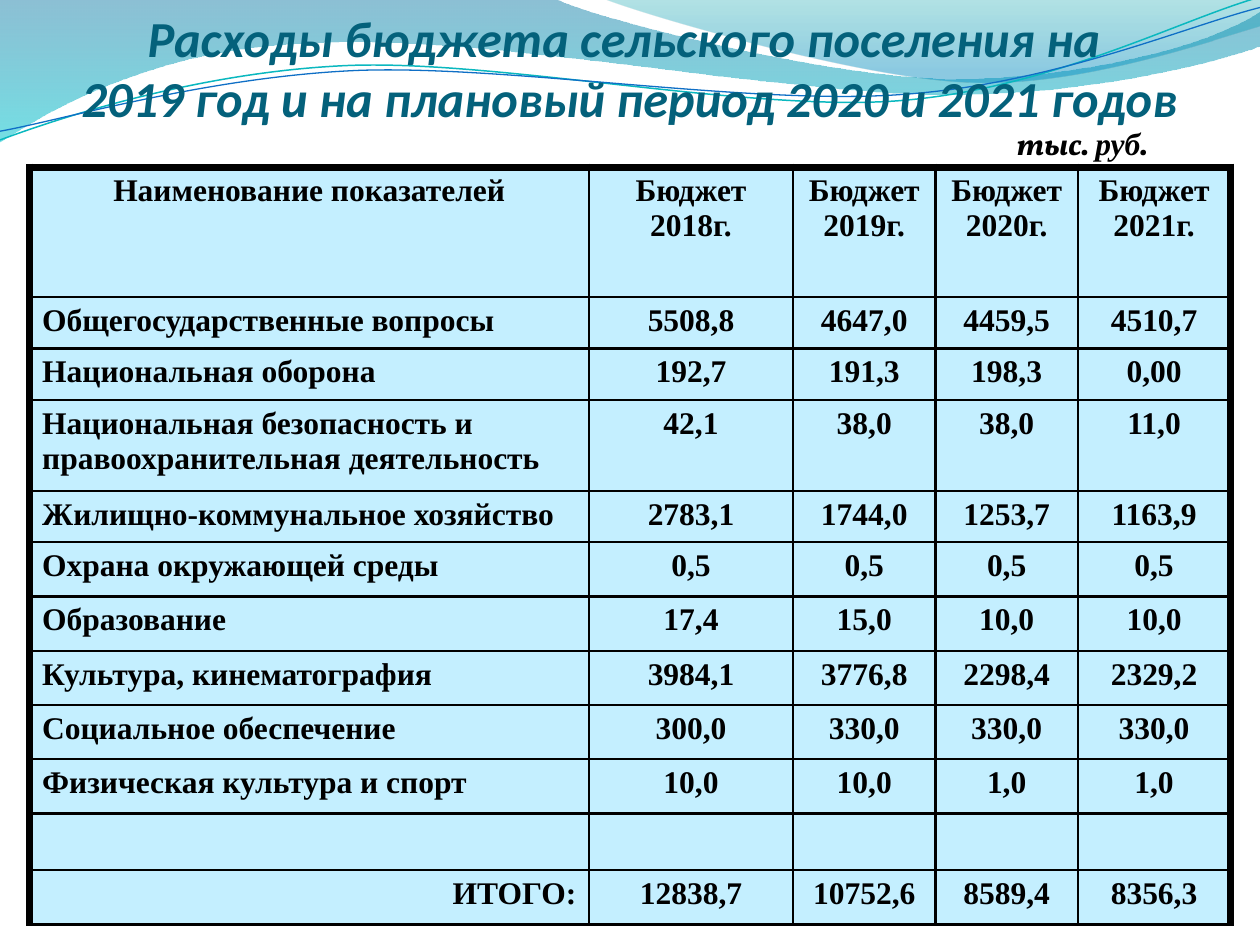
import math

import pptx
import pptx.dml.color
import pptx.enum.text
import pptx.oxml
import pptx.oxml.ns
import pptx.util
from lxml import etree

Pt = pptx.util.Pt
qn = pptx.oxml.ns.qn
ALIGN = pptx.enum.text.PP_ALIGN
ANCHOR = pptx.enum.text.MSO_ANCHOR

BLACK = "000000"
CELL_FILL = "C4EFFF"
THICK, THIN = 4.5, 1.5
LINE_TILT = -2.7

# Waves, in points: a start, then lines (2 numbers) and Bezier curves (6 numbers)
BROAD_WAVE = [
    (0, 0), (317, -0.7), (343, 12, 478, 45, 546, 45), (614, 45, 690, 27, 720, 6.5),
    (720.7, 26), (708, 32, 626, 55, 537, 54), (448, 54, 275, 20, 185, 24.5),
    (93, 26, 33, 60, -0.7, 81.4), (0, 0),
]
RIGHT_WAVE = [
    (345, -0.7), (366, 8, 491, 45, 554, 47), (616, 50, 692, 23, 720, 15), (720, 0),
]
TEAL_LINE = [
    (0, 80), (35, 67, 114, 41, 199, 37.4), (284, 34, 427, 64, 513, 57.6),
    (600, 51, 675, 11, 719, -1.4),
]
BLUE_LINE = [
    (0, 75), (34, 69, 118, 44, 204, 40.3), (290, 37, 430, 60.5, 516, 54),
    (602, 48, 677.5, 15, 720, 4.3),
]

COLUMN_WIDTHS = [319.7, 116.6, 81.4, 81.4, 87.1]
ROW_HEIGHTS = [74.2, 29.5, 29.5, 51.8, 29.5] + [31] * 5 + [32.4, 31]
BUDGET_ROWS = [
    ("Наименование показателей", "Бюджет 2018г.", "Бюджет 2019г.", "Бюджет 2020г.", "Бюджет 2021г."),
    ("Общегосударственные вопросы", "5508,8", "4647,0", "4459,5", "4510,7"),
    ("Национальная оборона", "192,7", "191,3", "198,3", "0,00"),
    ("Национальная безопасность и правоохранительная деятельность", "42,1", "38,0", "38,0", "11,0"),
    ("Жилищно-коммунальное хозяйство", "2783,1", "1744,0", "1253,7", "1163,9"),
    ("Охрана окружающей среды", "0,5", "0,5", "0,5", "0,5"),
    ("Образование", "17,4", "15,0", "10,0", "10,0"),
    ("Культура, кинематография", "3984,1", "3776,8", "2298,4", "2329,2"),
    ("Социальное обеспечение", "300,0", "330,0", "330,0", "330,0"),
    ("Физическая культура и спорт", "10,0", "10,0", "1,0", "1,0"),
    ("", "", "", "", ""),
    ("ИТОГО:", "12838,7", "10752,6", "8589,4", "8356,3"),
]


def color(hex_string):
    return pptx.dml.color.RGBColor.from_string(hex_string)


def set_font(font, name, size, hex_string, italic=False):
    font.name, font.size = name, Pt(size)
    font.bold, font.italic = True, italic
    font.color.rgb = color(hex_string)


def turn(segment, center, degrees):
    """Turn every point of a segment around the center."""
    cosine, sine = math.cos(math.radians(degrees)), math.sin(math.radians(degrees))
    turned = []
    for x, y in zip(segment[::2], segment[1::2]):
        dx, dy = x - center[0], y - center[1]
        turned += [center[0] + dx * cosine - dy * sine, center[1] + dx * sine + dy * cosine]
    return turned


def add_wave(slide, segments, close):
    points = [(Pt(x), Pt(y)) for segment in segments
              for x, y in zip(segment[::2], segment[1::2])]
    builder = slide.shapes.build_freeform(*points[0])
    builder.add_line_segments(points[1:], close=close)
    shape = builder.convert_to_shape()
    shape.shadow.inherit = False
    # Join each group of three points into one Bezier curve
    lines = iter(list(shape._element.iter(qn("a:lnTo"))))
    for segment in segments[1:]:
        group = [next(lines) for _ in range(len(segment) // 2)]
        if len(group) == 3:
            curve = etree.Element(qn("a:cubicBezTo"))
            group[0].addprevious(curve)
            for line in group:
                curve.append(line[0])
                line.getparent().remove(line)
    return shape


def add_filled_wave(slide, segments, stops):
    shape = add_wave(slide, segments, close=True)
    shape.line.fill.background()
    shape.fill.gradient()
    shape.fill.gradient_angle = 270
    for stop, (position, hex_string, _) in zip(shape.fill.gradient_stops, stops):
        stop.position = position
        stop.color.rgb = color(hex_string)
    for element, (_, _, opacity) in zip(shape._element.iter(qn("a:gs")), stops):
        etree.SubElement(element[0], qn("a:alpha"), val=str(opacity * 1000))


def add_wave_line(slide, segments, center, hex_string, width):
    level = [turn(segment, center, -LINE_TILT) for segment in segments]
    shape = add_wave(slide, level, close=False)
    shape.rotation = LINE_TILT
    shape.fill.background()
    shape.line.color.rgb = color(hex_string)
    shape.line.width = Pt(width)


def add_text_box(slide, left, top, width, height):
    frame = slide.shapes.add_textbox(Pt(left), Pt(top), Pt(width), Pt(height)).text_frame
    frame.word_wrap = True
    return frame


def add_title(slide):
    frame = add_text_box(slide, 0, 0, 720, 73)
    frame.vertical_anchor = ANCHOR.BOTTOM
    frame.margin_left = frame.margin_right = frame.margin_bottom = 0
    paragraph = frame.paragraphs[0]
    paragraph.text = ("Расходы бюджета сельского поселения на \v"
                      "2019 год и на плановый период 2020 и 2021 годов")
    paragraph.alignment = ALIGN.CENTER
    set_font(paragraph.font, "Calibri", 28.8, "04617B", italic=True)


def add_unit_label(slide):
    paragraph = add_text_box(slide, 573.8, 67.3, 106.6, 28.8).paragraphs[0]
    for text, name in (("тыс. ", "Vollkorn"), ("руб", "Times New Roman"), (".", "Vollkorn")):
        run = paragraph.add_run()
        run.text = text
        set_font(run.font, name, 18, BLACK, italic=True)


def set_borders(cell, widths):
    """Draw the left, right, top and bottom borders, in that order."""
    properties = cell._tc.get_or_add_tcPr()
    for index, (side, width) in enumerate(zip("LRTB", widths)):
        properties.insert(index, pptx.oxml.parse_xml(
            f'<a:ln{side} {pptx.oxml.ns.nsdecls("a")} w="{Pt(width)}">'
            f'<a:solidFill><a:srgbClr val="{BLACK}"/></a:solidFill></a:ln{side}>'))


def cell_alignment(row, column):
    if column > 0 or row == 0:
        return ALIGN.CENTER
    return ALIGN.RIGHT if row == len(BUDGET_ROWS) - 1 else ALIGN.LEFT


def add_budget_table(slide):
    last_column = len(COLUMN_WIDTHS) - 1
    table = slide.shapes.add_table(
        len(BUDGET_ROWS), len(COLUMN_WIDTHS), Pt(16.9), Pt(95.5),
        Pt(sum(COLUMN_WIDTHS)), Pt(sum(ROW_HEIGHTS))).table
    for column, width in zip(table.columns, COLUMN_WIDTHS):
        column.width = Pt(width)
    for row, height in zip(table.rows, ROW_HEIGHTS):
        row.height = Pt(height)
    for r, texts in enumerate(BUDGET_ROWS):
        for c, text in enumerate(texts):
            cell = table.cell(r, c)
            cell.fill.solid()
            cell.fill.fore_color.rgb = color(CELL_FILL)
            set_borders(cell, (THICK if c == 0 else THIN, THICK if c == last_column else THIN,
                               THICK if r == 0 else THIN, THIN))
            if text:
                paragraph = cell.text_frame.paragraphs[0]
                paragraph.text = text
                paragraph.alignment = cell_alignment(r, c)
                set_font(paragraph.font, "Times New Roman", 18, BLACK)


def main():
    presentation = pptx.Presentation()
    presentation.slide_width, presentation.slide_height = Pt(720), Pt(540)
    slide = presentation.slides.add_slide(presentation.slide_layouts[6])

    # Decorative waves
    add_filled_wave(slide, BROAD_WAVE, [(0, "0074A1", 45), (1, "00C6CF", 55)])
    add_filled_wave(slide, RIGHT_WAVE, [(0, "00A1A9", 30), (0.8, "008BBF", 45)])
    add_wave_line(slide, TEAL_LINE, (359.3, 41.4), "0AB8BF", 0.85)
    add_wave_line(slide, BLUE_LINE, (359.6, 42.5), "0F6FC6", 0.75)

    # Content
    add_title(slide)
    add_budget_table(slide)
    add_unit_label(slide)

    presentation.save("out.pptx")


if __name__ == "__main__":
    main()
